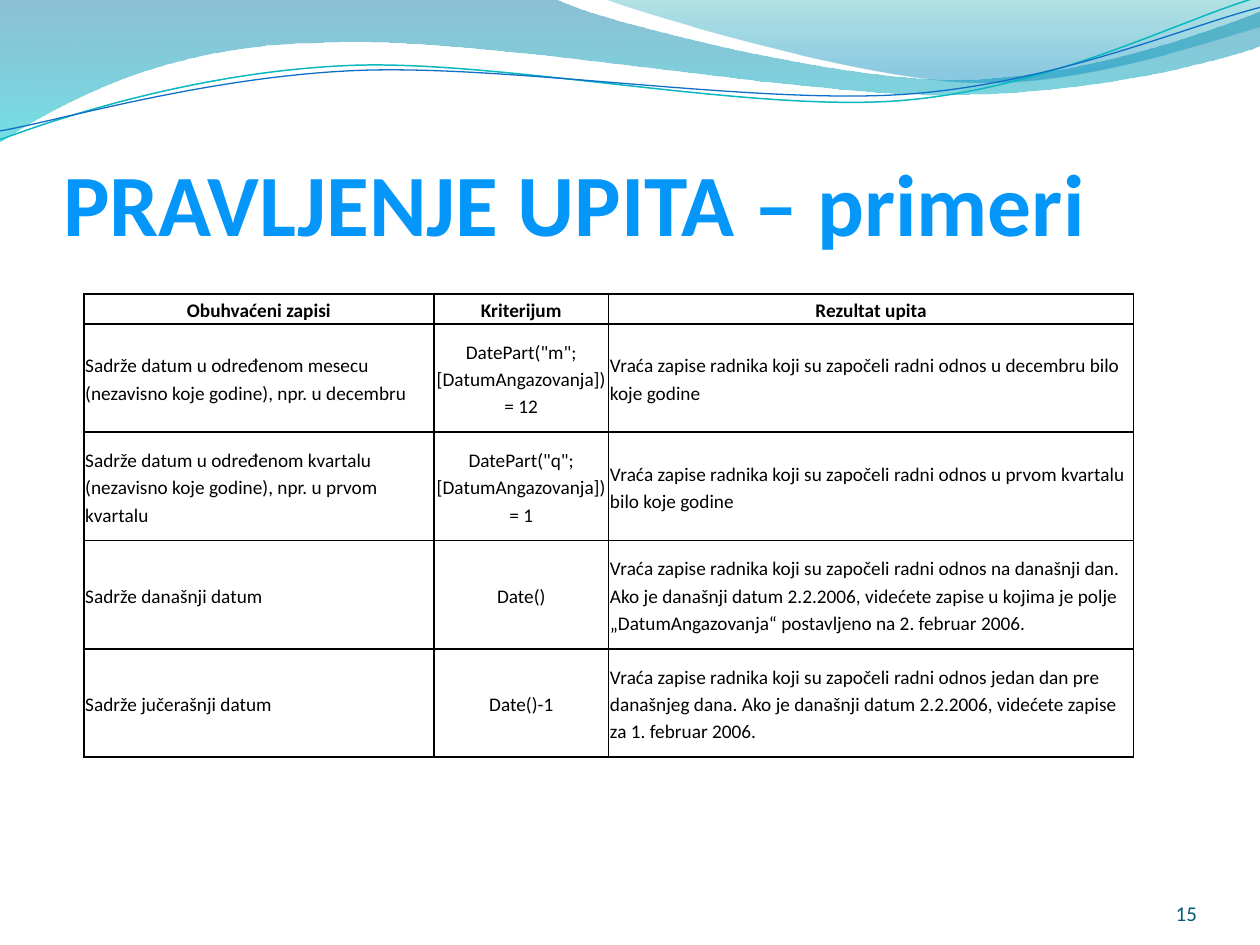
from copy import deepcopy
from math import cos, radians, sin

from lxml.etree import SubElement
from pptx import Presentation
from pptx.dml.color import RGBColor
from pptx.enum.text import MSO_ANCHOR, MSO_AUTO_SIZE, PP_ALIGN
from pptx.oxml.ns import qn
from pptx.util import Inches, Pt

COLORS = {
    "number": "045C75", "text": "000000", "border": "000000",
    "teal_line": "0AB8BF", "blue_line": "0F6FC6",
}

# Outlines: a pair is a straight step, six numbers are a Bezier curve
WIDE_WAVE = [
    (0, -0.01), (4.4, -0.01),
    (4.76, 0.17, 6.64, 0.63, 7.58, 0.63), (8.53, 0.63, 9.58, 0.26, 10, 0.09),
    (10.01, 0.36),
    (9.83, 0.44, 8.7, 0.76, 7.46, 0.75), (6.22, 0.75, 3.82, 0.28, 2.57, 0.34),
    (1.29, 0.35, 0.46, 0.83, -0.01, 1.13), (0, -0.01),
]
RIGHT_WAVE = [
    (4.79, -0.01),
    (5.09, 0.11, 6.82, 0.62, 7.69, 0.65), (8.56, 0.69, 9.61, 0.32, 10, 0.21),
    (10, 0), (4.79, -0.01),
]
TEAL_CURVE = [
    (0, 1.11),
    (0.48, 0.93, 1.58, 0.57, 2.77, 0.52), (3.95, 0.47, 5.93, 0.89, 7.13, 0.8),
    (8.33, 0.71, 9.38, 0.15, 9.98, -0.02),
]
BLUE_CURVE = [
    (0, 1.04),
    (0.47, 0.96, 1.64, 0.61, 2.83, 0.56), (4.03, 0.51, 5.97, 0.83, 7.17, 0.75),
    (8.36, 0.67, 9.41, 0.21, 10, 0.06),
]
CURVE_TILT = 2.7

# Gradient stops: position, colour, opacity in percent
WIDE_STOPS = [(0, "0074A1", 45), (1, "00C6CF", 55)]
RIGHT_STOPS = [(0, "00A1A9", 30), (0.8, "008BBF", 45)]
TITLE_STOPS = [(0, "7DC4FF", 100), (0.75, "0497F9", 100), (1, "0074A1", 100)]

TABLE_WIDTH = 8.33
COLUMN_SHARES = [1 / 3, 1 / 6, 1 / 2]
HEADER_HEIGHT, ROW_HEIGHT = 0.23, 0.86
QUERIES = [
    ("Obuhvaćeni zapisi", "Kriterijum", "Rezultat upita"),
    ("Sadrže datum u određenom mesecu (nezavisno koje godine), npr. u decembru",
     'DatePart("m"; [DatumAngazovanja]) = 12',
     "Vraća zapise radnika koji su započeli radni odnos u decembru bilo koje godine"),
    ("Sadrže datum u određenom kvartalu (nezavisno koje godine), npr. u prvom kvartalu",
     'DatePart("q"; [DatumAngazovanja]) = 1',
     "Vraća zapise radnika koji su započeli radni odnos u prvom kvartalu bilo koje godine"),
    ("Sadrže današnji datum", "Date()",
     "Vraća zapise radnika koji su započeli radni odnos na današnji dan. "
     "Ako je današnji datum 2.2.2006, videćete zapise u kojima je polje "
     "„DatumAngazovanja“ postavljeno na 2. februar 2006."),
    ("Sadrže jučerašnji datum", "Date()-1",
     "Vraća zapise radnika koji su započeli radni odnos jedan dan pre današnjeg dana. "
     "Ako je današnji datum 2.2.2006, videćete zapise za 1. februar 2006."),
]


def set_all(target, values):
    for attribute, value in values.items():
        setattr(target, attribute, value)


def format_text(paragraph, size, bold=False, color=None, **layout):
    set_all(paragraph, layout)
    font = paragraph.runs[0].font
    set_all(font, {"name": "Calibri", "size": Pt(size), "bold": bold})
    if color:
        font.color.rgb = RGBColor.from_string(color)
    return font


def fill_gradient(fill, stops):
    """Fill from top to bottom with any number of stops."""
    fill.gradient()
    fill.gradient_angle = 270
    stop_list = fill._xPr.find(qn("a:gradFill")).find(qn("a:gsLst"))
    while len(stop_list) < len(stops):
        stop_list.append(deepcopy(stop_list[-1]))
    for stop, node, (position, color, opacity) in zip(fill.gradient_stops, stop_list, stops):
        stop.position = position
        stop.color.rgb = RGBColor.from_string(color)
        if opacity < 100:
            SubElement(node[0], qn("a:alpha"), val=str(opacity * 1000))


def tilt_points(points, angle):
    """Turn points clockwise about the middle of their extent."""
    middle_x, middle_y = ((min(axis) + max(axis)) / 2 for axis in zip(*points))
    c, s = cos(radians(angle)), sin(radians(angle))
    return [(middle_x + (x - middle_x) * c - (y - middle_y) * s,
             middle_y + (x - middle_x) * s + (y - middle_y) * c) for x, y in points]


def add_outline(slide, outline, close, tilt=0):
    points = [step[i:i + 2] for step in outline for i in range(0, len(step), 2)]
    first, *rest = [(Inches(x), Inches(y)) for x, y in tilt_points(points, tilt)]
    builder = slide.shapes.build_freeform(*first)
    builder.add_line_segments(rest, close=close)
    shape = builder.convert_to_shape()
    shape.shadow.inherit = False
    shape.rotation = -tilt % 360
    # Join each three points of a curved step into one Bezier segment
    segments = iter(list(shape.element.iter(qn("a:lnTo"))))
    for step in outline[1:]:
        segment = next(segments)
        if len(step) == 6:
            segment.tag = qn("a:cubicBezTo")
            for _ in range(2):
                extra = next(segments)
                segment.append(extra[0])
                extra.getparent().remove(extra)
    return shape


def add_wave(slide, outline, stops):
    wave = add_outline(slide, outline, True)
    wave.line.fill.background()
    fill_gradient(wave.fill, stops)


def add_curve(slide, outline, color, width):
    curve = add_outline(slide, outline, False, CURVE_TILT)
    curve.fill.background()
    curve.line.color.rgb = RGBColor.from_string(color)
    curve.line.width = Pt(width)


def fill_frame(frame, text, margin_top=0):
    frame.text = text
    set_all(frame, {"margin_left": 0, "margin_right": 0, "margin_top": margin_top,
                    "margin_bottom": 0, "vertical_anchor": MSO_ANCHOR.BOTTOM,
                    "auto_size": MSO_AUTO_SIZE.NONE, "word_wrap": True})
    return frame.paragraphs[0]


def add_title(slide, text):
    title = slide.shapes.title
    set_all(title, {"left": Inches(0.5), "top": Inches(0.77),
                    "width": Inches(9), "height": Inches(1.25)})
    paragraph = fill_frame(title.text_frame, text, Inches(0.05))
    font = format_text(paragraph, 50, True, alignment=PP_ALIGN.LEFT)
    fill_gradient(font.fill, TITLE_STOPS)


def add_page_number(slide, number):
    box = slide.shapes.add_textbox(Inches(8.67), Inches(6.95), Inches(0.83), Inches(0.4))
    format_text(fill_frame(box.text_frame, number), 12, color=COLORS["number"],
                alignment=PP_ALIGN.RIGHT)


def add_borders(cell):
    properties = cell._tc.get_or_add_tcPr()
    for side in ("lnL", "lnR", "lnT", "lnB"):
        border = SubElement(properties, qn(f"a:{side}"), w=str(Pt(1)))
        SubElement(SubElement(border, qn("a:solidFill")), qn("a:srgbClr"),
                   val=COLORS["border"])


def add_query_table(slide):
    height = HEADER_HEIGHT + ROW_HEIGHT * (len(QUERIES) - 1)
    table = slide.shapes.add_table(
        len(QUERIES), len(COLUMN_SHARES), Inches(2 / 3), Inches(7 / 3),
        Inches(TABLE_WIDTH), Inches(height)).table
    set_all(table, {"first_row": False, "horz_banding": False})
    for column, share in zip(table.columns, COLUMN_SHARES):
        column.width = Inches(TABLE_WIDTH * share)
    margins = {f"margin_{side}": Inches(0.01)
               for side in ("left", "right", "top", "bottom")}
    for r, query in enumerate(QUERIES):
        header = r == 0
        table.rows[r].height = Inches(HEADER_HEIGHT if header else ROW_HEIGHT)
        for c, text in enumerate(query):
            cell = table.cell(r, c)
            cell.text = text
            set_all(cell, {**margins, "vertical_anchor": MSO_ANCHOR.MIDDLE})
            centred = header or c == 1
            format_text(cell.text_frame.paragraphs[0], 11, header, COLORS["text"],
                        alignment=PP_ALIGN.CENTER if centred else PP_ALIGN.LEFT,
                        line_spacing=1.15, space_after=Pt(10))
            add_borders(cell)
            cell.fill.background()


def main():
    presentation = Presentation()
    set_all(presentation, {"slide_width": Inches(10), "slide_height": Inches(7.5)})
    slide = presentation.slides.add_slide(presentation.slide_layouts[5])
    # Wave decoration along the top
    add_wave(slide, WIDE_WAVE, WIDE_STOPS)
    add_wave(slide, RIGHT_WAVE, RIGHT_STOPS)
    add_curve(slide, TEAL_CURVE, COLORS["teal_line"], 0.85)
    add_curve(slide, BLUE_CURVE, COLORS["blue_line"], 0.75)
    # Content
    add_title(slide, "PRAVLJENJE UPITA – primeri")
    add_page_number(slide, "15")
    add_query_table(slide)
    presentation.save("out.pptx")


if __name__ == "__main__":
    main()
